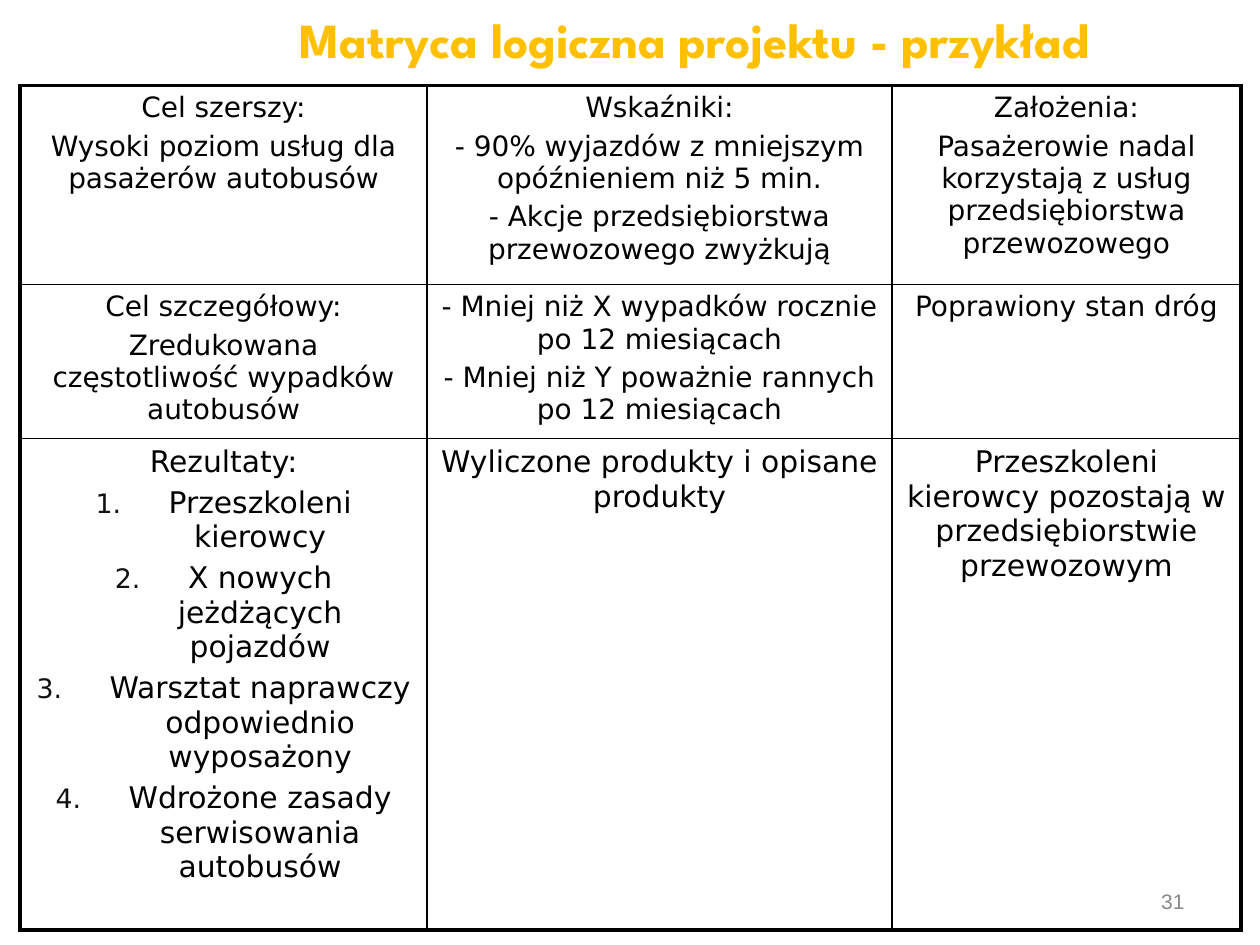
from dataclasses import dataclass

from lxml.etree import SubElement as Sub
from pptx import Presentation
from pptx.dml.color import RGBColor as RGB
from pptx.enum.text import MSO_ANCHOR as Anchor, PP_ALIGN as Align
from pptx.oxml.ns import qn
from pptx.util import Inches, Pt


@dataclass(frozen=True)
class Theme:
    """Fonts, colours, type sizes and line widths."""
    title_font: str = "League Spartan"
    body_font: str = "DejaVu Sans"
    number_font: str = "Arial"
    title: str = "FFC000"
    ink: str = "000000"
    bullet: str = "111111"
    number: str = "898989"
    title_size: int = 28
    body_size: int = 16
    result_size: int = 17
    number_size: int = 12
    gap: float = 3.4
    outer: float = 2.25
    inner: float = 1


@dataclass(frozen=True)
class MatrixCell:
    """Paragraphs of one cell, with an optional numbered list below."""
    lines: tuple[str, ...]
    numbered: tuple[str, ...] = ()


T = Theme()
COLS = (3.23, 3.69, 2.77)
ROWS = (1.58, 1.22, 3.9)
MATRIX = (
    (
        MatrixCell(("Cel szerszy:", "Wysoki poziom usług dla pasażerów autobusów")),
        MatrixCell(("Wskaźniki:",
                    "- 90% wyjazdów z mniejszym opóźnieniem niż 5 min.",
                    "- Akcje przedsiębiorstwa przewozowego zwyżkują")),
        MatrixCell(("Założenia:",
                    "Pasażerowie nadal korzystają z usług przedsiębiorstwa przewozowego")),
    ),
    (
        MatrixCell(("Cel szczegółowy:", "Zredukowana częstotliwość wypadków autobusów")),
        MatrixCell(("- Mniej niż X wypadków rocznie po 12 miesiącach",
                    "- Mniej niż Y poważnie rannych po 12 miesiącach")),
        MatrixCell(("Poprawiony stan dróg",)),
    ),
    (
        MatrixCell(("Rezultaty:",),
                   ("Przeszkoleni kierowcy",
                    "X nowych jeżdżących pojazdów",
                    "Warsztat naprawczy odpowiednio wyposażony",
                    "Wdrożone zasady serwisowania autobusów")),
        MatrixCell(("Wyliczone produkty i opisane produkty",)),
        MatrixCell(("Przeszkoleni kierowcy pozostają w przedsiębiorstwie przewozowym",)),
    ),
)


def write(tf, text: str, *, font: str, size: float, color: str, bold: bool = False,
          align=Align.CENTER, before: float = 0, left: float = 0, hang: float = 0,
          numbered: bool = False, new: bool = False) -> None:
    """Write one formatted paragraph into a text frame."""
    p = tf.add_paragraph() if new else tf.paragraphs[0]
    p.alignment, p.space_before = align, Pt(before)
    r = p.add_run()
    r.text = text
    r.font.name, r.font.size, r.font.bold = font, Pt(size), bold
    r.font.color.rgb = RGB.from_string(color)
    pPr = p._p.get_or_add_pPr()
    pPr.set("marL", str(Inches(left)))
    pPr.set("indent", str(Inches(-hang)))
    if numbered:
        Sub(Sub(pPr, qn("a:buClr")), qn("a:srgbClr"), val=T.bullet)
        Sub(pPr, qn("a:buSzPct"), val="90000")
        Sub(pPr, qn("a:buAutoNum"), type="arabicPeriod")
    else:
        Sub(pPr, qn("a:buNone"))


def set_borders(cell, row: int, col: int) -> None:
    """Draw heavy lines on the table's outside and thin ones within."""
    edges = {"L": col == 0, "R": col == len(COLS) - 1,
             "T": row == 0, "B": row == len(ROWS) - 1}
    tcPr = cell._tc.get_or_add_tcPr()
    for side, outside in edges.items():
        width = Pt(T.outer if outside else T.inner)
        ln = Sub(tcPr, qn(f"a:ln{side}"), w=str(width))
        Sub(Sub(ln, qn("a:solidFill")), qn("a:srgbClr"), val=T.ink)


def fill_cell(cell, content: MatrixCell, size: float) -> None:
    """Write a cell's plain and numbered paragraphs."""
    hang = 0.58 if content.numbered else 0
    cell.vertical_anchor = Anchor.TOP
    for i, text in enumerate(content.lines + content.numbered):
        write(cell.text_frame, text, font=T.body_font, size=size, color=T.ink,
              before=T.gap if i else 0, left=hang, hang=hang,
              numbered=i >= len(content.lines), new=i > 0)


def add_title(s, text: str) -> None:
    """Place and format the title placeholder."""
    sp = s.shapes.title
    sp.left, sp.top, sp.width, sp.height = map(Inches, (0.75, 0.02, 9, 0.57))
    sp.text_frame.vertical_anchor = Anchor.MIDDLE
    write(sp.text_frame, text, font=T.title_font, size=T.title_size,
          color=T.title, bold=True, left=0.53)


def add_matrix(s) -> None:
    """Add the logical matrix table."""
    table = s.shapes.add_table(len(ROWS), len(COLS), Inches(0.16), Inches(0.68),
                               Inches(sum(COLS)), Inches(sum(ROWS))).table
    table.first_row = table.horz_banding = False
    for column, width in zip(table.columns, COLS):
        column.width = Inches(width)
    for i, (row, height) in enumerate(zip(table.rows, ROWS)):
        row.height = Inches(height)
        size = T.result_size if i == len(ROWS) - 1 else T.body_size
        for j, cell in enumerate(row.cells):
            set_borders(cell, i, j)
            cell.fill.background()
            fill_cell(cell, MATRIX[i][j], size)


def add_number(s, text: str) -> None:
    """Add the slide number."""
    tf = s.shapes.add_textbox(*map(Inches, (7.17, 6.95, 2.33, 0.4))).text_frame
    tf.word_wrap, tf.vertical_anchor = True, Anchor.MIDDLE
    write(tf, text, font=T.number_font, size=T.number_size, color=T.number,
          align=Align.RIGHT)


def main() -> None:
    """Build and save the slide."""
    prs = Presentation()
    prs.slide_width, prs.slide_height = Inches(10), Inches(7.5)
    s = prs.slides.add_slide(prs.slide_layouts[5])
    add_title(s, "Matryca logiczna projektu - przykład")
    add_matrix(s)
    add_number(s, "31")
    prs.save("out.pptx")


if __name__ == "__main__":
    main()
